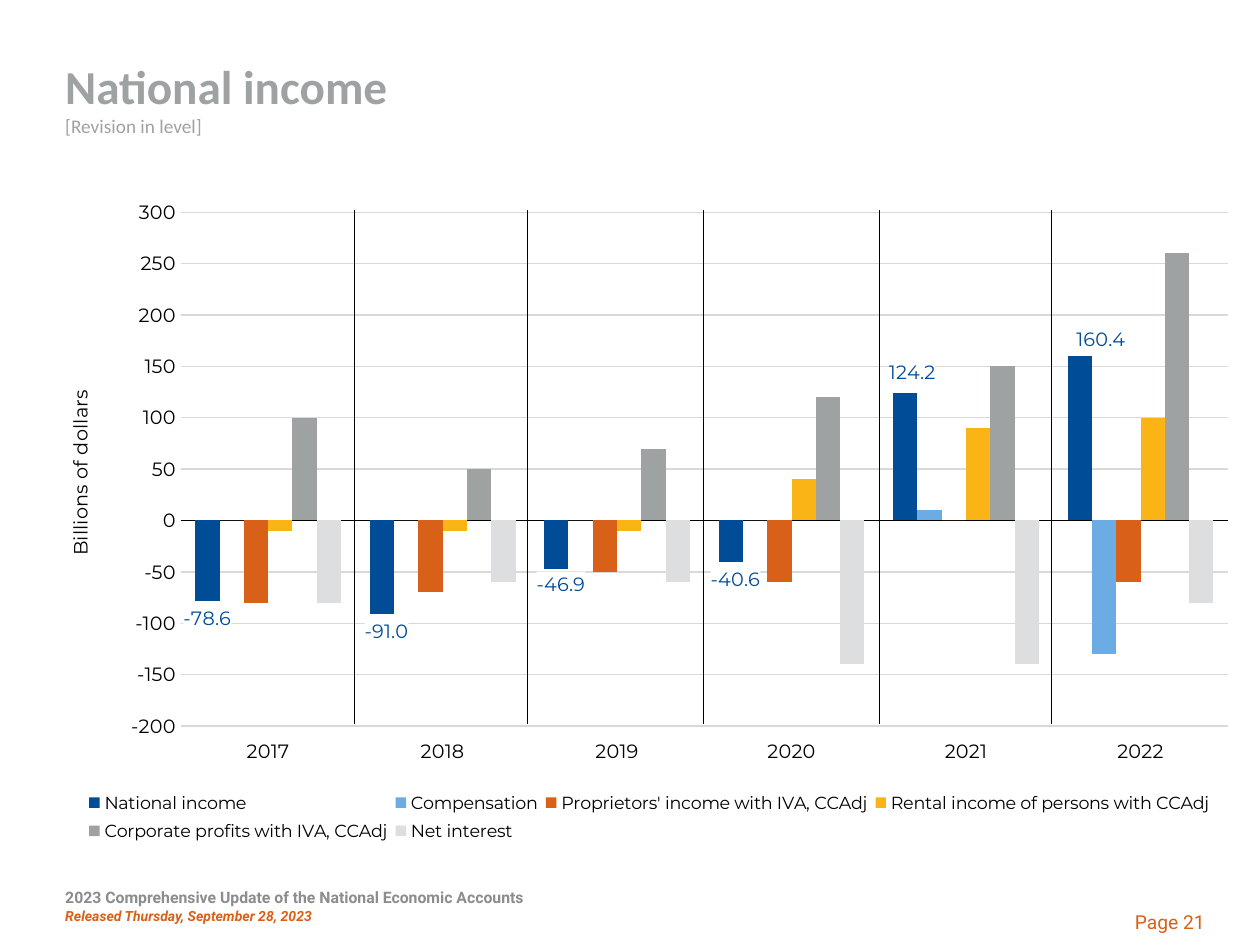
from pptx import Presentation
from pptx.chart.data import CategoryChartData
from pptx.dml.color import RGBColor
from pptx.enum import chart as charts, shapes, text
from pptx.oxml import parse_xml
from pptx.oxml.ns import nsdecls
from pptx.util import Pt

BLACK = RGBColor(0x00, 0x00, 0x00)
NAVY = RGBColor(0x00, 0x4C, 0x97)
SKY = RGBColor(0x6C, 0xAC, 0xE4)
ORANGE = RGBColor(0xD8, 0x60, 0x18)
AMBER = RGBColor(0xFB, 0xB4, 0x16)
GRAY = RGBColor(0x9E, 0xA2, 0xA2)
PALE_GRAY = RGBColor(0xDC, 0xDE, 0xDF)
GRID_GRAY = RGBColor(0xD9, 0xD9, 0xD9)
FOOTER_GRAY = RGBColor(0x8C, 0x8C, 0x8C)

YEARS = ["2017", "2018", "2019", "2020", "2021", "2022"]
SERIES = [
    ("National income", NAVY, [-78.6, -91.0, -46.9, -40.6, 124.2, 160.4]),
    ("Compensation", SKY, [0, 0, 0, 0, 10, -130]),
    ("Proprietors' income with IVA, CCAdj", ORANGE, [-80, -70, -50, -60, 0, -60]),
    ("Rental income of persons with CCAdj", AMBER, [-10, -10, -10, 40, 90, 100]),
    ("Corporate profits with IVA, CCAdj", GRAY, [100, 50, 70, 120, 150, 260]),
    ("Net interest", PALE_GRAY, [-80, -60, -60, -140, -140, -80]),
]
LABEL_OFFSETS = [(0, 0), (0.004, 0), (0.004, -0.003), (0.004, 0), (0.006, -0.005), (0.018, 0.002)]
DIVIDERS = [202.5, 301.3, 402, 502.6, 600.7]


def set_font(font, name, size, color, bold=False, italic=False):
    font.name, font.size, font.bold, font.italic = name, Pt(size), bold, italic
    font.color.rgb = color


def add_text_box(slide, left, top, width, height, lines, anchor=text.MSO_ANCHOR.TOP):
    box = slide.shapes.add_textbox(Pt(left), Pt(top), Pt(width), Pt(height))
    frame = box.text_frame
    frame.word_wrap = True
    frame.vertical_anchor = anchor
    frame.text = "\n".join(lines)
    return frame


def add_title(slide):
    frame = add_text_box(slide, 30.2, 18, 548, 72,
                         ["National income\v[Revision in level]"], text.MSO_ANCHOR.MIDDLE)
    frame.margin_bottom = 0
    heading, subtitle = frame.paragraphs[0].runs
    set_font(heading.font, "Calibri", 27, GRAY, bold=True)
    set_font(subtitle.font, "Calibri", 11, GRAY)


def add_footer(slide):
    frame = add_text_box(slide, 30.2, 504, 522, 39.6, [
        "2023 Comprehensive Update of the National Economic Accounts",
        "Released Thursday, September 28, 2023"])
    update, release = frame.paragraphs
    set_font(update.runs[0].font, "Roboto", 9, FOOTER_GRAY, bold=True)
    set_font(release.runs[0].font, "Roboto", 8, ORANGE, bold=True, italic=True)


def add_page_number(slide):
    frame = add_text_box(slide, 617.8, 515.5, 77.8, 23, ["Page 21"], text.MSO_ANCHOR.MIDDLE)
    paragraph = frame.paragraphs[0]
    paragraph.alignment = text.PP_ALIGN.RIGHT
    set_font(paragraph.runs[0].font, "Roboto", 11, ORANGE)


def add_divider(slide, x):
    line = slide.shapes.add_connector(shapes.MSO_CONNECTOR.STRAIGHT,
                                      Pt(x), Pt(120.2), Pt(x), Pt(413.8))
    line.line.color.rgb = BLACK
    line.line.width = Pt(0.75)
    line._element.spPr.append(parse_xml(f"<a:effectLst {nsdecls('a')}/>"))


def place(element, after, modes="", **fractions):
    """Give a chart part a manual layout, set behind its child named after."""
    for old in element.xpath("c:layout"):
        element.remove(old)
    values = "".join(f'<c:{key} val="{value}"/>' for key, value in fractions.items())
    layout = parse_xml(f"<c:layout {nsdecls('c')}><c:manualLayout>{modes}{values}"
                       "</c:manualLayout></c:layout>")
    position = element.index(element.xpath(after)[0]) + 1 if after else 0
    element.insert(position, layout)
    return layout


def label_points(series):
    """Show the value of each column on a white ground."""
    for index, (dx, dy) in enumerate(LABEL_OFFSETS):
        label = series.points[index].data_label
        label.position = charts.XL_LABEL_POSITION.OUTSIDE_END
        set_font(label.font, "Montserrat", 11, NAVY)
        element = series._element.xpath(f"c:dLbls/c:dLbl[c:idx/@val='{index}']")[0]
        for old in element.xpath("c:spPr"):
            element.remove(old)
        layout = place(element, "c:idx", x=dx, y=dy)
        layout.addnext(parse_xml(
            f"<c:spPr {nsdecls('c', 'a')}><a:solidFill><a:srgbClr val=\"FFFFFF\"/>"
            "</a:solidFill><a:ln><a:noFill/></a:ln></c:spPr>"))
        layout.addnext(parse_xml(
            f"<c:numFmt {nsdecls('c')} formatCode=\"#,##0.0\" sourceLinked=\"0\"/>"))


def format_axes(chart):
    years, dollars = chart.category_axis, chart.value_axis
    for axis in (years, dollars):
        axis.major_tick_mark = axis.minor_tick_mark = charts.XL_TICK_MARK.NONE
        set_font(axis.tick_labels.font, "Montserrat", 11, BLACK)
    years.tick_label_position = charts.XL_TICK_LABEL_POSITION.LOW
    years.format.line.color.rgb = BLACK
    years.format.line.width = Pt(0.75)
    dollars.minimum_scale, dollars.maximum_scale, dollars.major_unit = -200, 300, 50
    dollars.tick_labels.number_format = "#,##0"
    dollars.tick_labels.number_format_is_linked = False
    dollars.format.line.fill.background()
    dollars.major_gridlines.format.line.color.rgb = GRID_GRAY
    dollars.major_gridlines.format.line.width = Pt(0.75)
    frame = dollars.axis_title.text_frame
    frame.text = "Billions of dollars"
    set_font(frame.paragraphs[0].runs[0].font, "Montserrat", 11, BLACK)


def add_income_chart(slide):
    data = CategoryChartData()
    data.categories = YEARS
    for name, _, values in SERIES:
        data.add_series(name, values)
    chart = slide.shapes.add_chart(charts.XL_CHART_TYPE.COLUMN_CLUSTERED, Pt(30.2), Pt(101.8),
                                   Pt(671.8), Pt(390), data).chart
    set_font(chart.font, "Montserrat", 11, BLACK)
    chart.has_title = False
    chart.has_legend = True
    chart.legend.position = charts.XL_LEGEND_POSITION.BOTTOM
    chart.legend.include_in_layout = False
    set_font(chart.legend.font, "Montserrat", 10, BLACK)
    format_axes(chart)

    plot = chart.plots[0]
    plot.gap_width, plot.overlap, plot.vary_by_categories = 118, 0, False
    for series, (_, color, _) in zip(plot.series, SERIES):
        series.format.fill.solid()
        series.format.fill.fore_color.rgb = color
        series.invert_if_negative = False
    label_points(plot.series[0])

    edges = '<c:xMode val="edge"/><c:yMode val="edge"/>'
    inner = '<c:layoutTarget val="inner"/>' + edges
    area = chart._chartSpace.xpath("c:chart/c:plotArea")[0]
    place(area, None, inner, x=0.109, y=0.05, w=0.891, h=0.753)
    place(chart.legend._element, "c:legendPos", edges, x=0.024, y=0.889, w=0.967, h=0.094)
    place(chart.value_axis.axis_title._element, "c:tx", edges, x=0.008, y=0.305)


def main():
    presentation = Presentation()
    presentation.slide_width, presentation.slide_height = Pt(720), Pt(540)
    slide = presentation.slides.add_slide(presentation.slide_layouts[6])
    add_page_number(slide)
    add_title(slide)
    add_footer(slide)
    add_income_chart(slide)
    for x in DIVIDERS:
        add_divider(slide, x)
    presentation.save("out.pptx")


if __name__ == "__main__":
    main()
